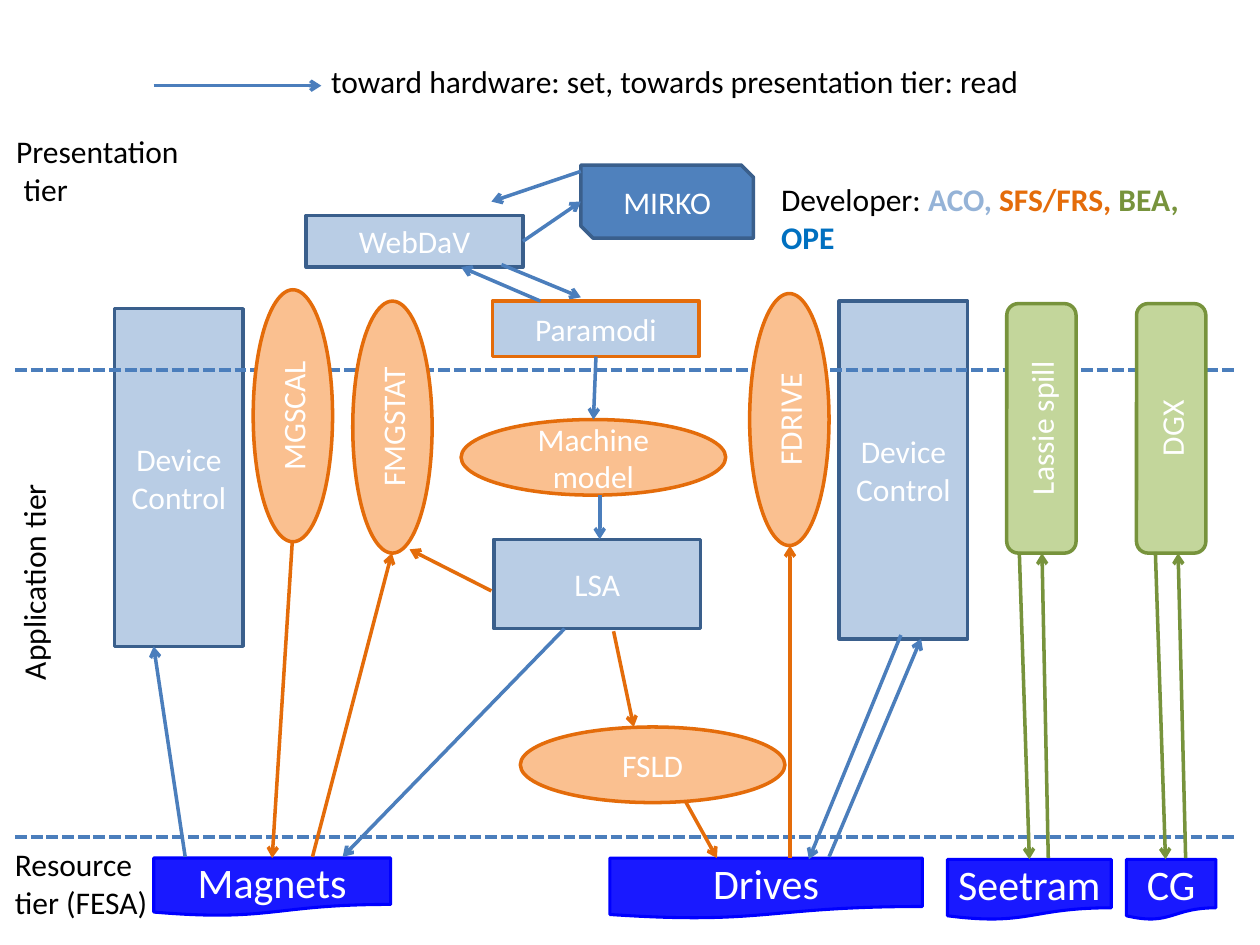
"""Build a slide showing control applications across presentation, application and resource tiers."""
from lxml import etree
from pptx import Presentation
from pptx.dml.color import RGBColor
from pptx.enum.dml import MSO_LINE
from pptx.enum.shapes import MSO_CONNECTOR, MSO_SHAPE
from pptx.enum.text import MSO_ANCHOR, MSO_AUTO_SIZE, PP_ALIGN
from pptx.oxml.ns import qn
from pptx.util import Inches, Pt

RECTANGLE = MSO_SHAPE.RECTANGLE
ELLIPSE = MSO_SHAPE.OVAL
ROUNDED = MSO_SHAPE.ROUNDED_RECTANGLE
DOCUMENT = MSO_SHAPE.FLOWCHART_DOCUMENT
SNIPPED = MSO_SHAPE.SNIP_2_DIAG_RECTANGLE
STRAIGHT = MSO_CONNECTOR.STRAIGHT
CENTER = PP_ALIGN.CENTER
MIDDLE = MSO_ANCHOR.MIDDLE
DASH = MSO_LINE.SQUARE_DOT
GROW = MSO_AUTO_SIZE.SHAPE_TO_FIT_TEXT
TOP, BOTTOM, RIGHT = 0, 2, 3

COLORS = {
    "black": "000000", "white": "FFFFFF", "pale blue": "B9CDE5", "mid blue": "4F81BD",
    "edge blue": "3A5F8C", "arrow blue": "4B7EBC", "resource": "0000FF",
    "pale orange": "FAC090", "orange": "E46C0A", "pale green": "C3D69B", "green": "77933C",
    "ACO": "95B3D7", "OPE": "0070C0",
}

STYLES = {
    "control": (RECTANGLE, "pale blue", "edge blue"),
    "parameter": (RECTANGLE, "pale blue", "orange"),
    "model": (ELLIPSE, "pale orange", "orange"),
    "beam": (ROUNDED, "pale green", "green"),
    "optics": (SNIPPED, "mid blue", "edge blue"),
    "resource": (DOCUMENT, "resource", "resource"),
}

BACK_SHAPES = [
    ("Device Control", "control", (6.66, 2.39, 1.02, 2.68)),
    ("Device Control", "control", (0.91, 2.45, 1.02, 2.68)),
    ("Magnets", "resource", (1.22, 6.81, 1.88, 0.46)),
    ("Drives", "resource", (4.84, 6.81, 2.48, 0.48)),
    ("CG", "resource", (8.94, 6.82, 0.71, 0.48)),
    ("Seetram", "resource", (7.52, 6.82, 1.3, 0.48)),
]
TIER_BORDERS = [2.94, 6.64]
FRONT_SHAPES = [
    ("Paramodi", "parameter", (3.91, 2.39, 1.64, 0.44)),
    ("LSA", "control", (3.92, 4.28, 1.64, 0.71)),
    ("Machine model", "model", (3.66, 3.33, 2.1, 0.6)),
    ("FSLD", "model", (4.13, 5.77, 2.1, 0.6)),
    ("MGSCAL", "model", (2.01, 2.3, 0.63, 2)),
    ("FMGSTAT", "model", (2.8, 2.39, 0.63, 2)),
    ("FDRIVE", "model", (5.95, 2.33, 0.63, 2)),
    ("DGX", "beam", (9.02, 2.41, 0.55, 1.98)),
    ("Lassie spill", "beam", (7.99, 2.41, 0.55, 1.98)),
    ("MIRKO", "optics", (4.61, 1.31, 1.37, 0.58)),
    ("WebDaV", "control", (2.43, 1.71, 1.72, 0.41)),
]

ARROWS = {
    "arrow blue": [
        ((1.22, 0.68), (2.55, 0.68)),
        ((1.47, 6.8), (1.22, 5.13)),
        ((7.15, 5.04), (6.42, 6.82)),
        ((6.58, 6.8), (7.31, 5.07)),
        (("Paramodi", BOTTOM), ("Machine model", TOP)),
        ((4.76, 3.93), (4.76, 4.28)),
        ((4.48, 4.99), (2.72, 6.8)),
        ((4.29, 2.39), (3.66, 2.12)),
        ((3.98, 2.1), (4.61, 2.36)),
        ((4.61, 1.36), (3.9, 1.6)),
        (("WebDaV", RIGHT), (4.61, 1.6)),
    ],
    "orange": [
        ((4.87, 5.01), (5.03, 5.77)),
        ((5.44, 6.36), (5.69, 6.81)),
        ((2.48, 6.8), (3.11, 4.39)),
        ((2.32, 4.3), (2.16, 6.81)),
        ((3.9, 4.69), (3.25, 4.36)),
        ((6.27, 6.81), (6.27, 4.33)),
    ],
    "green": [
        ((8.32, 6.81), (8.27, 4.39)),
        ((8.09, 4.38), (8.17, 6.82)),
        ((9.41, 6.81), (9.35, 4.39)),
        ((9.17, 4.38), (9.25, 6.82)),
    ],
}

LABELS = [
    ((0.03, 1, 1.51, 0.71), [("Presentation", 0), ("tier", 0.06)], False, 0),
    ((-0.62, 4.41, 1.77, 0.4), [("Application tier", 0)], True, 270),
    ((0.02, 6.66, 1.27, 0.71), [("Resource", 0), ("tier (FESA)", 0)], False, 0),
    ((2.53, 0.44, 5.72, 0.4),
     [("toward hardware: set, towards presentation tier: read", 0)], False, 0),
]
DEVELOPER_BOX = (6.1, 1.38, 3.78, 0.71)
DEVELOPERS = [("Developer: ", "black"), ("ACO, ", "ACO"), ("SFS/FRS, ", "orange"),
              ("BEA, ", "green"), ("OPE", "OPE")]


def color(name):
    return RGBColor.from_string(COLORS[name])


def set_font(font, name="black", size=18):
    font.name = "Calibri"
    font.size = Pt(size)
    font.color.rgb = color(name)


def add_box(slide, text, style, place):
    preset, fill, edge = STYLES[style]
    resource = style == "resource"
    shape = slide.shapes.add_shape(preset, *map(Inches, place))
    shape.shadow.inherit = False
    shape.fill.solid()
    shape.fill.fore_color.rgb = color(fill)
    shape.line.color.rgb = color(edge)
    shape.line.width = Pt(1.75 if resource else 2)
    frame = shape.text_frame
    frame.word_wrap = not resource
    frame.vertical_anchor = MIDDLE
    paragraph = frame.paragraphs[0]
    paragraph.text = text
    paragraph.alignment = CENTER
    set_font(paragraph.font, "white", 24 if resource else 18)
    if resource:
        fill_color = shape.fill._xPr.find(qn("a:solidFill"))[0]
        etree.SubElement(fill_color, qn("a:alpha"), val="90000")
    if place[3] > place[2] and style in ("model", "beam"):
        frame._txBody.bodyPr.set("vert", "vert270")
    return shape


def add_line(slide, start, end, name, width=2):
    line = slide.shapes.add_connector(STRAIGHT, *map(Inches, start + end))
    line.line.color.rgb = color(name)
    line.line.width = Pt(width)
    etree.SubElement(line._element.spPr, qn("a:effectLst"))
    return line


def add_arrow(slide, start, end, name, boxes):
    glued_start, glued_end = start[0] in boxes, end[0] in boxes
    arrow = add_line(slide, (0, 0) if glued_start else start, (0, 0) if glued_end else end, name)
    if glued_start:
        arrow.begin_connect(boxes[start[0]], start[1])
    if glued_end:
        arrow.end_connect(boxes[end[0]], end[1])
    etree.SubElement(arrow.line._get_or_add_ln(), qn("a:tailEnd"), type="arrow")


def add_text_frame(slide, place, wrap, rotation=0):
    box = slide.shapes.add_textbox(*map(Inches, place))
    box.rotation = rotation
    box.text_frame.word_wrap = wrap
    box.text_frame.auto_size = GROW
    return box.text_frame


def main():
    presentation = Presentation()
    presentation.slide_width, presentation.slide_height = Inches(10), Inches(7.5)
    slide = presentation.slides.add_slide(presentation.slide_layouts[6])

    for box in BACK_SHAPES:
        add_box(slide, *box)
    for top in TIER_BORDERS:
        border = add_line(slide, (0.12, top), (9.8, top), "arrow blue", 2.25)
        border.line.dash_style = DASH
    boxes = {box[0]: add_box(slide, *box) for box in FRONT_SHAPES}
    for name, arrows in ARROWS.items():
        for start, end in arrows:
            add_arrow(slide, start, end, name, boxes)

    for place, lines, wrap, rotation in LABELS:
        frame = add_text_frame(slide, place, wrap, rotation)
        for index, (text, indent) in enumerate(lines):
            paragraph = frame.add_paragraph() if index else frame.paragraphs[0]
            paragraph.text = text
            if indent:
                paragraph._p.get_or_add_pPr().set("marL", str(Inches(indent)))
            set_font(paragraph.font)

    paragraph = add_text_frame(slide, DEVELOPER_BOX, True).paragraphs[0]
    for text, name in DEVELOPERS:
        run = paragraph.add_run()
        run.text = text
        set_font(run.font, name)
        run.font.bold = name != "black"

    presentation.save("out.pptx")


if __name__ == "__main__":
    main()
